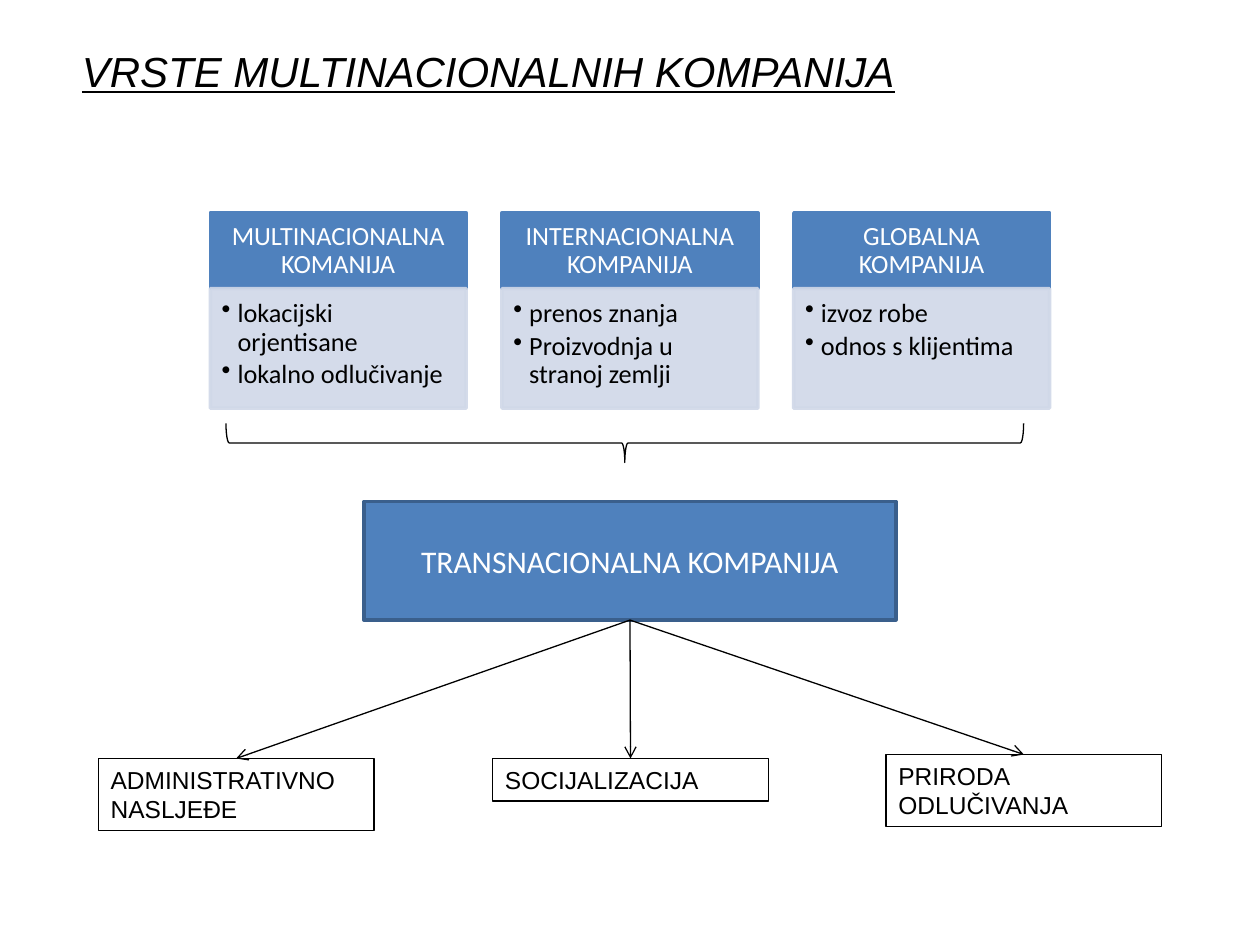
from lxml import etree
from pptx import Presentation
from pptx.dml.color import RGBColor
from pptx.enum import shapes, text
from pptx.oxml.ns import qn
from pptx.util import Cm, Pt

BLUE, PALE, DARK_BLUE = "4F81BD", "D0D8E8", "3A5F8C"
BLACK, WHITE = "000000", "FFFFFF"
CARD_LEFT, CARD_STEP, CARD_WIDTH = 4.24, 5.88, 5.16
CENTER, HUB_TOP, HUB_WIDTH, HUB_HEIGHT = 12.7, 10.11, 10.72, 2.39
FACTOR_WIDTH = 5.56

COMPANIES = [
    ("MULTINACIONALNA KOMANIJA", ["lokacijski orjentisane", "lokalno odlučivanje"]),
    ("INTERNACIONALNA KOMPANIJA", ["prenos znanja", "Proizvodnja u stranoj zemlji"]),
    ("GLOBALNA KOMPANIJA", ["izvoz robe", "odnos s klijentima"]),
]
FACTORS = [  # label, left, top, height
    ("ADMINISTRATIVNO NASLJEĐE", 1.98, 15.29, 1.45),
    ("SOCIJALIZACIJA", 9.93, 15.29, 0.86),
    ("PRIRODA ODLUČIVANJA", 17.86, 15.21, 1.45),
]


def color(value):
    return RGBColor.from_string(value)


def set_alpha(fill_parent, percent):
    """Make the solid fill directly under an XML element translucent."""
    rgb = fill_parent.find(qn("a:solidFill")).find(qn("a:srgbClr"))
    etree.SubElement(rgb, qn("a:alpha"), val=str(percent * 1000))


def add_box(slide, box, fill=None, line=BLACK, line_width=0.75,
            kind=shapes.MSO_SHAPE.RECTANGLE):
    shape = slide.shapes.add_shape(kind, *map(Cm, box))
    shape.shadow.inherit = False
    if fill:
        shape.fill.solid()
        shape.fill.fore_color.rgb = color(fill)
    else:
        shape.fill.background()
    shape.line.color.rgb = color(line)
    shape.line.width = Pt(line_width)
    return shape


def set_text(shape, lines, size, font="Arial", font_color=BLACK,
             align=text.PP_ALIGN.LEFT, anchor=text.MSO_ANCHOR.TOP, insets=None):
    """Write one paragraph per line and return the paragraphs."""
    frame = shape.text_frame
    frame.word_wrap = True
    frame.vertical_anchor = anchor
    if insets:
        (frame.margin_left, frame.margin_top,
         frame.margin_right, frame.margin_bottom) = map(Cm, insets)
    for index, line in enumerate(lines):
        paragraph = frame.add_paragraph() if index else frame.paragraphs[0]
        paragraph.alignment = align
        run = paragraph.add_run()
        run.text = line
        run.font.size = Pt(size)
        run.font.name = font
        run.font.color.rgb = color(font_color)
    return frame.paragraphs


def add_bullet(paragraph):
    properties = paragraph._p.get_or_add_pPr()
    properties.set("marL", str(Cm(0.32)))
    properties.set("indent", str(-Cm(0.32)))
    etree.SubElement(properties, qn("a:buChar"), char="•")


def add_card(slide, left, heading, points):
    header = add_box(slide, (left, 4.29, CARD_WIDTH, 1.53), BLUE, BLUE, 2)
    paragraphs = set_text(header, [heading], 15, "Calibri", WHITE,
                          text.PP_ALIGN.CENTER, text.MSO_ANCHOR.MIDDLE,
                          (0.3, 0.17, 0.3, 0.17))
    paragraphs[0].line_spacing = 0.9

    body = add_box(slide, (left, 5.82, CARD_WIDTH, 2.41), PALE, PALE, 2)
    set_alpha(body._element.spPr, 90)
    set_alpha(body.line._ln, 90)
    for paragraph in set_text(body, points, 15, "Calibri",
                              insets=(0.23, 0.23, 0.3, 0.32)):
        paragraph.line_spacing = 0.9
        paragraph.space_after = Pt(2.25)
        add_bullet(paragraph)


def add_arrow(slide, start, end):
    arrow = slide.shapes.add_connector(
        shapes.MSO_CONNECTOR.STRAIGHT, *map(Cm, start + end))
    arrow.line.color.rgb = color(BLACK)
    arrow.line.width = Pt(0.75)
    etree.SubElement(arrow.line._ln, qn("a:tailEnd"), type="arrow")
    etree.SubElement(arrow._element.spPr, qn("a:effectLst"))


def add_title(slide):
    title = slide.shapes.add_textbox(Cm(1.4), Cm(0.79), Cm(20.24), Cm(1.3))
    paragraphs = set_text(title, ["VRSTE MULTINACIONALNIH KOMPANIJA"], 24)
    font = paragraphs[0].runs[0].font
    font.italic = True
    font.underline = True


def main():
    presentation = Presentation()
    presentation.slide_width, presentation.slide_height = Cm(25.4), Cm(19.05)
    slide = presentation.slides.add_slide(presentation.slide_layouts[6])

    add_title(slide)
    for index, (heading, points) in enumerate(COMPANIES):
        add_card(slide, CARD_LEFT + index * CARD_STEP, heading, points)

    brace = add_box(slide, (12.2, 0.89, 0.79, 16.08),
                    kind=shapes.MSO_SHAPE.RIGHT_BRACE)
    brace.rotation = 90

    hub = add_box(slide, (CENTER - HUB_WIDTH / 2, HUB_TOP, HUB_WIDTH, HUB_HEIGHT),
                  BLUE, DARK_BLUE, 2)
    set_text(hub, ["TRANSNACIONALNA KOMPANIJA"], 18, "Calibri", WHITE,
             text.PP_ALIGN.CENTER, text.MSO_ANCHOR.MIDDLE)

    for label, left, top, height in FACTORS:
        factor = add_box(slide, (left, top, FACTOR_WIDTH, height))
        set_text(factor, [label], 14)
        add_arrow(slide, (CENTER, HUB_TOP + HUB_HEIGHT),
                  (left + FACTOR_WIDTH / 2, top))

    presentation.save("out.pptx")


if __name__ == "__main__":
    main()
